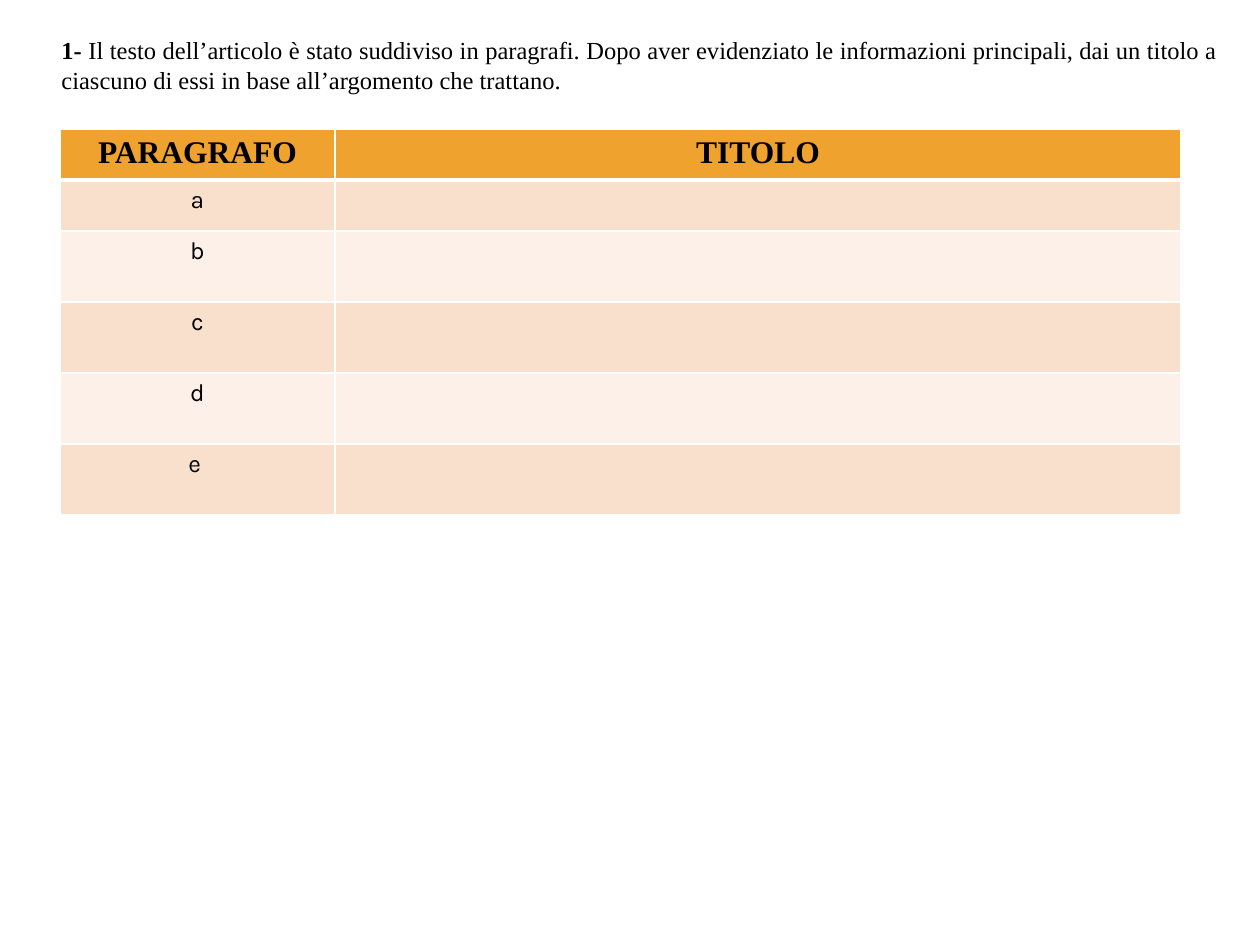
from dataclasses import dataclass

from pptx import Presentation
from pptx.dml.color import RGBColor
from pptx.enum.text import MSO_AUTO_SIZE, PP_ALIGN
from pptx.oxml import parse_xml
from pptx.oxml.ns import nsdecls
from pptx.util import Emu, Pt

PX = 914400 // 126
CENTER, JUSTIFY = PP_ALIGN.CENTER, PP_ALIGN.JUSTIFY
FIT_SHAPE = MSO_AUTO_SIZE.SHAPE_TO_FIT_TEXT
BLACK = RGBColor(0x00, 0x00, 0x00)
WHITE = RGBColor(0xFF, 0xFF, 0xFF)
ORANGE = RGBColor(0xF0, 0xA2, 0x2E)
PEACH = RGBColor(0xF9, 0xE0, 0xCD)
CREAM = RGBColor(0xFC, 0xF0, 0xE8)
SERIF, SANS = "Times New Roman", "Karla"


@dataclass(frozen=True)
class TextStyle:
    font: str
    size: int
    bold: bool = False


@dataclass(frozen=True)
class TableRow:
    texts: tuple[str, str]
    height: int
    fill: RGBColor
    style: TextStyle
    bottom_border: int = 1


BODY = TextStyle(SERIF, 14)
NUMBER = TextStyle(SERIF, 14, True)
HEADING = TextStyle(SERIF, 18, True)
LETTER = TextStyle(SANS, 14)

INSTRUCTION = (
    ("1- ", NUMBER),
    ("Il testo dell’articolo è stato suddiviso in paragrafi. Dopo aver evidenziato "
     "le informazioni principali, dai un titolo a ciascuno di essi in base "
     "all’argomento che trattano.", BODY),
)
COLUMN_WIDTHS = (275, 846)
ROWS = [TableRow(("PARAGRAFO", "TITOLO"), 51, ORANGE, HEADING, 3)] + [
    TableRow((letter, ""), 51 if index == 0 else 71, (PEACH, CREAM)[index % 2], LETTER)
    for index, letter in enumerate(("a", "b", "c", "d", "e "))
]


def px(length: int) -> Emu:
    return Emu(length * PX)


def add_run(paragraph, text: str, style: TextStyle) -> None:
    run = paragraph.add_run()
    run.text = text
    run.font.name = style.font
    run.font.size = Pt(style.size)
    run.font.bold = style.bold
    run.font.color.rgb = BLACK


def add_instruction(slide) -> None:
    box = slide.shapes.add_textbox(px(49), px(29), px(1182), px(72))
    frame = box.text_frame
    frame.word_wrap = True
    frame.auto_size = FIT_SHAPE
    paragraph = frame.paragraphs[0]
    paragraph.alignment = JUSTIFY
    for text, style in INSTRUCTION:
        add_run(paragraph, text, style)


def set_borders(cell, top: int, bottom: int) -> None:
    properties = cell._tc.get_or_add_tcPr()
    widths = {"lnL": 1, "lnR": 1, "lnT": top, "lnB": bottom}
    for position, (side, width) in enumerate(widths.items()):
        properties.insert(position, parse_xml(
            f'<a:{side} {nsdecls("a")} w="{Pt(width)}"><a:solidFill>'
            f'<a:srgbClr val="{WHITE}"/></a:solidFill></a:{side}>'))


def add_title_table(slide) -> None:
    height = sum(row.height for row in ROWS)
    table = slide.shapes.add_table(
        len(ROWS), len(COLUMN_WIDTHS), px(60), px(129),
        px(sum(COLUMN_WIDTHS)), px(height)).table
    for column, width in zip(table.columns, COLUMN_WIDTHS):
        column.width = px(width)
    top_border = 1
    for table_row, row in zip(table.rows, ROWS):
        table_row.height = px(row.height)
        for cell, text in zip(table_row.cells, row.texts):
            cell.fill.solid()
            cell.fill.fore_color.rgb = row.fill
            set_borders(cell, top_border, row.bottom_border)
            paragraph = cell.text_frame.paragraphs[0]
            paragraph.alignment = CENTER
            if text:
                add_run(paragraph, text, row.style)
        top_border = row.bottom_border


def main() -> None:
    presentation = Presentation()
    presentation.slide_width = px(1260)
    presentation.slide_height = px(945)
    slide = presentation.slides.add_slide(presentation.slide_layouts[6])
    add_instruction(slide)
    add_title_table(slide)
    presentation.save("out.pptx")


if __name__ == "__main__":
    main()
